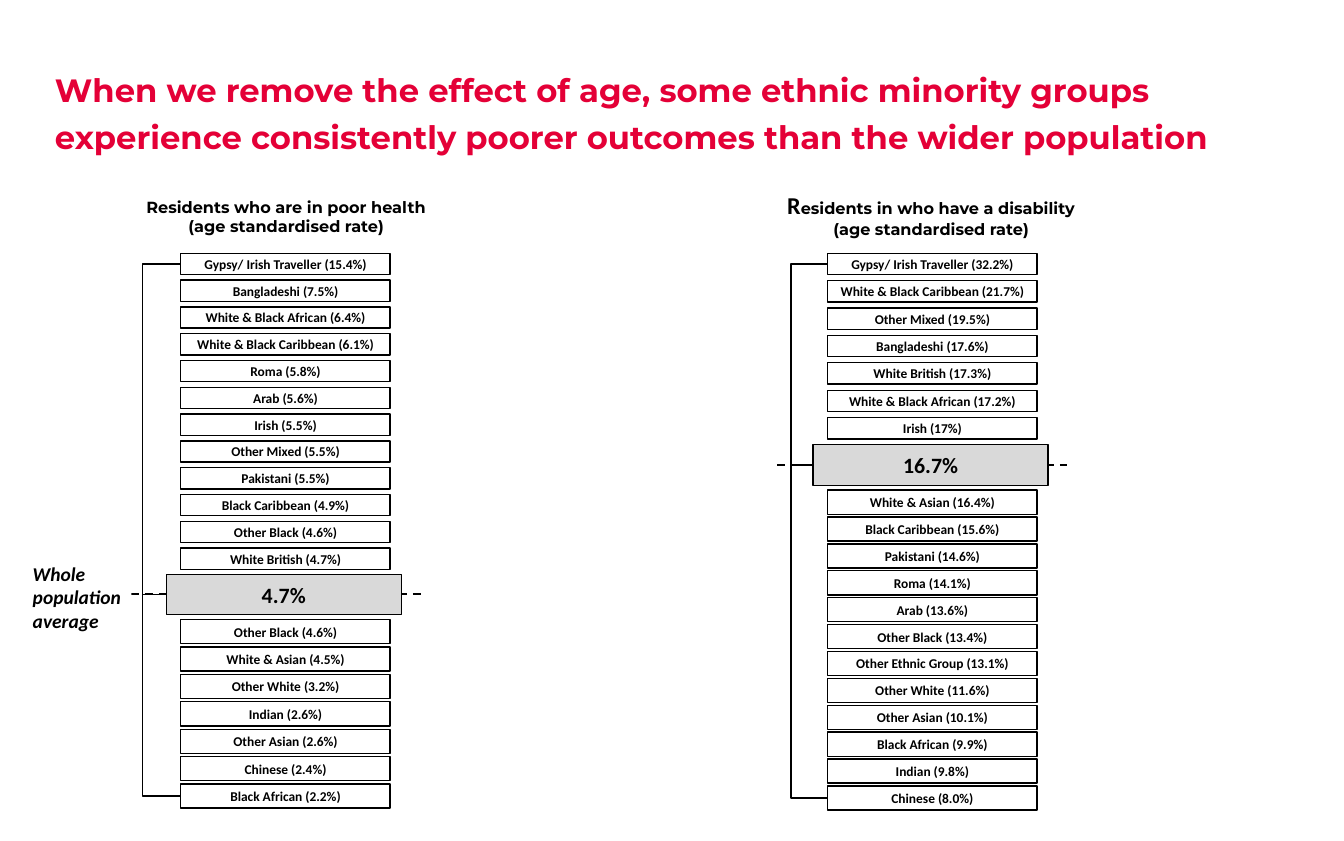
from dataclasses import dataclass

import lxml.etree
import pptx
import pptx.dml.color
import pptx.enum.dml
import pptx.enum.shapes
import pptx.enum.text
import pptx.oxml.ns
import pptx.util

# Grid: ten columns and ten rows to the inch
COLUMNS, ROWS = 139, 87
SLIDE_WIDTH, SLIDE_HEIGHT = pptx.util.Inches(13.9), pptx.util.Inches(8.7)

BLACK, WHITE, GREY, RED = "000000", "FFFFFF", "D9D9D9", "E40037"
CENTER = pptx.enum.text.PP_ALIGN.CENTER
LEFT = pptx.enum.text.PP_ALIGN.LEFT
MIDDLE = pptx.enum.text.MSO_ANCHOR.MIDDLE
STRAIGHT = pptx.enum.shapes.MSO_CONNECTOR.STRAIGHT
ELBOW = pptx.enum.shapes.MSO_CONNECTOR.ELBOW


@dataclass
class Area:
    left: float
    top: float
    width: float
    height: float


@dataclass
class Stack:
    """Equal boxes, evenly spaced from the first top to the last top."""
    first_top: float
    last_top: float
    height: float
    labels: list[str]


@dataclass
class Ranking:
    heading: str
    heading_area: Area
    initial_size: float | None
    left: float
    spine: float
    average: str
    average_top: float
    above: Stack
    below: Stack


RANKINGS = [
    Ranking(
        "Residents who are in poor health\n(age standardised rate)",
        Area(1.9, 20.4, 55.4, 4), None, 18.7, 14.75, "4.7%", 59.4,
        Stack(26.2, 56.7, 2.2, [
            "Gypsy/ Irish Traveller (15.4%)", "Bangladeshi (7.5%)",
            "White & Black African (6.4%)", "White & Black Caribbean (6.1%)",
            "Roma (5.8%)", "Arab (5.6%)", "Irish (5.5%)", "Other Mixed (5.5%)",
            "Pakistani (5.5%)", "Black Caribbean (4.9%)", "Other Black (4.6%)",
            "White British (4.7%)"]),
        Stack(64.1, 81.1, 2.5, [
            "Other Black (4.6%)", "White & Asian (4.5%)", "Other White (3.2%)",
            "Indian (2.6%)", "Other Asian (2.6%)", "Chinese (2.4%)",
            "Black African (2.2%)"]),
    ),
    Ranking(
        "Residents in who have a disability\n(age standardised rate)",
        Area(71.4, 20.4, 49.8, 3.6), 18, 85.6, 81.8, "16.7%", 46,
        Stack(26.2, 43.2, 2.2, [
            "Gypsy/ Irish Traveller (32.2%)", "White & Black Caribbean (21.7%)",
            "Other Mixed (19.5%)", "Bangladeshi (17.6%)", "White British (17.3%)",
            "White & Black African (17.2%)", "Irish (17%)"]),
        Stack(50.7, 81.3, 2.5, [
            "White & Asian (16.4%)", "Black Caribbean (15.6%)", "Pakistani (14.6%)",
            "Roma (14.1%)", "Arab (13.6%)", "Other Black (13.4%)",
            "Other Ethnic Group (13.1%)", "Other White (11.6%)",
            "Other Asian (10.1%)", "Black African (9.9%)", "Indian (9.8%)",
            "Chinese (8.0%)"]),
    ),
]


def x(columns: float) -> int:
    return round(SLIDE_WIDTH * columns / COLUMNS)


def y(rows: float) -> int:
    return round(SLIDE_HEIGHT * rows / ROWS)


def color(value: str) -> pptx.dml.color.RGBColor:
    return pptx.dml.color.RGBColor.from_string(value)


def place(area: Area) -> tuple[int, int, int, int]:
    return x(area.left), y(area.top), x(area.width), y(area.height)


def write(shape, text: str, *, size: float, font: str = "Calibri", fill: str = BLACK,
          align=CENTER, italic: bool = False, spacing: float | None = None,
          initial_size: float | None = None) -> None:
    """Write bold text; a given initial size sets off the first letter in Calibri."""
    frame = shape.text_frame
    frame.word_wrap = True
    for index, line in enumerate(text.split("\n")):
        paragraph = frame.add_paragraph() if index else frame.paragraphs[0]
        paragraph.alignment = align
        if spacing:
            paragraph.line_spacing = spacing
        runs = [(line, size, font)]
        if initial_size and index == 0:
            runs = [(line[0], initial_size, "Calibri"), (line[1:], size, font)]
        for run_text, run_size, run_font in runs:
            run = paragraph.add_run()
            run.text = run_text
            run.font.size = pptx.util.Pt(run_size)
            run.font.name = run_font
            run.font.bold = True
            run.font.italic = italic
            run.font.color.rgb = color(fill)


def add_box(slide, area: Area, text: str, *, fill: str = WHITE,
            outlined: bool = True, **text_format) -> None:
    shape = slide.shapes.add_shape(
        pptx.enum.shapes.MSO_SHAPE.RECTANGLE, *place(area))
    shape.shadow.inherit = False
    shape.fill.solid()
    shape.fill.fore_color.rgb = color(fill)
    if outlined:
        shape.line.color.rgb = color(BLACK)
        shape.line.width = pptx.util.Pt(1)
    else:
        shape.line.fill.background()
    shape.text_frame.vertical_anchor = MIDDLE
    write(shape, text, **text_format)


def add_line(slide, start: tuple[float, float], end: tuple[float, float], *,
             width: float = 1, dashed: bool = False, spine: float | None = None) -> None:
    """Draw a straight line, or an elbow whose upright runs at the spine column."""
    connector = slide.shapes.add_connector(
        STRAIGHT if spine is None else ELBOW,
        x(start[0]), y(start[1]), x(end[0]), y(end[1]))
    connector.line.color.rgb = color(BLACK)
    connector.line.width = pptx.util.Pt(width)
    if dashed:
        connector.line.dash_style = pptx.enum.dml.MSO_LINE.DASH
    qn = pptx.oxml.ns.qn
    properties = connector._element.spPr
    if spine is not None:
        share = round(100000 * (spine - start[0]) / (end[0] - start[0]))
        guides = properties.find(qn("a:prstGeom")).find(qn("a:avLst"))
        lxml.etree.SubElement(guides, qn("a:gd"), name="adj1", fmla=f"val {share}")
    lxml.etree.SubElement(properties, qn("a:effectLst"))


def add_stack(slide, left: float, stack: Stack) -> None:
    step = (stack.last_top - stack.first_top) / (len(stack.labels) - 1)
    for index, label in enumerate(stack.labels):
        area = Area(left, stack.first_top + index * step, 21.65, stack.height)
        add_box(slide, area, label, size=10)


def add_ranking(slide, ranking: Ranking) -> None:
    add_box(slide, ranking.heading_area, ranking.heading, outlined=False, size=12,
            font="Montserrat", initial_size=ranking.initial_size)

    # Average bar on its dashed line
    bar = Area(ranking.left - 1.5, ranking.average_top, 24.3, 4.2)
    middle = bar.top + bar.height / 2
    dash_left = bar.left - 3.7
    add_line(slide, (dash_left, middle), (dash_left + 30, middle), width=1.5, dashed=True)
    add_box(slide, bar, ranking.average, fill=GREY, size=16.3)

    # Groups above and below the average, bracketed to the bar
    for stack, end_top in ((ranking.above, ranking.above.first_top),
                           (ranking.below, ranking.below.last_top)):
        add_stack(slide, ranking.left, stack)
        add_line(slide, (bar.left, middle),
                 (ranking.left, end_top + stack.height / 2), spine=ranking.spine)


def main() -> None:
    presentation = pptx.Presentation()
    presentation.slide_width, presentation.slide_height = SLIDE_WIDTH, SLIDE_HEIGHT
    slide = presentation.slides.add_slide(presentation.slide_layouts[6])

    # Title
    title = slide.shapes.add_textbox(*place(Area(4.7, 6, 130.2, 5.7)))
    write(title, "When we remove the effect of age, some ethnic minority groups "
          "experience consistently poorer outcomes than the wider population",
          size=24, font="Montserrat", fill=RED, align=LEFT, spacing=1.2)

    # Rankings and the label of the average line
    for ranking in RANKINGS:
        add_ranking(slide, ranking)
    add_box(slide, Area(2.4, 57.6, 11.2, 8.3), "Whole population average",
            outlined=False, size=14.5, align=LEFT, italic=True)

    presentation.save("out.pptx")


if __name__ == "__main__":
    main()
